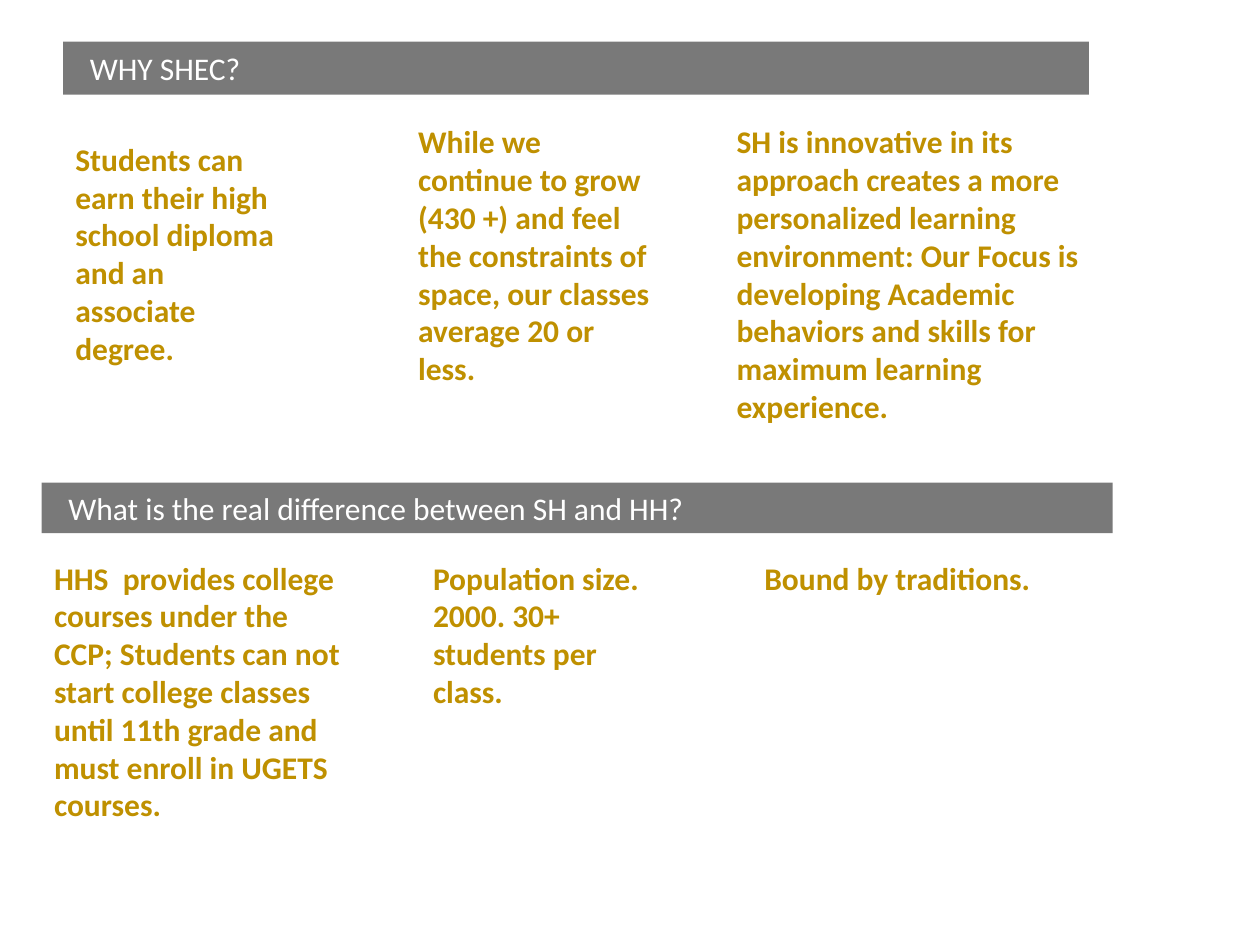
from lxml import etree
from pptx import Presentation
from pptx.dml.color import RGBColor
from pptx.enum.shapes import MSO_SHAPE
from pptx.enum.text import MSO_ANCHOR, MSO_AUTO_SIZE, PP_ALIGN
from pptx.oxml.ns import qn
from pptx.util import Cm, Pt

RECTANGLE = MSO_SHAPE.RECTANGLE
TOP, MIDDLE = MSO_ANCHOR.TOP, MSO_ANCHOR.MIDDLE
NO_AUTOFIT = MSO_AUTO_SIZE.NONE
LEFT = PP_ALIGN.LEFT
TITLE_ONLY = 5
COLOURS = {"bar": "0C0C0C", "heading": "FFFFFF", "body": "BF9000"}


def write_text(shape, text, *, colour, font="Calibri", size=18, bold=False,
               anchor=TOP, inset=0.25):
    """Fill the shape with one paragraph for each line of text."""
    frame = shape.text_frame
    frame.text = text
    frame.word_wrap = True
    frame.auto_size = NO_AUTOFIT
    frame.vertical_anchor = anchor
    frame.margin_left = Cm(inset)
    frame.margin_right = Cm(0.25)
    frame.margin_top = frame.margin_bottom = Cm(0.13)
    for paragraph in frame.paragraphs:
        paragraph.alignment = LEFT
        for run in paragraph.runs:
            run.font.name = font
            run.font.size = Pt(size)
            run.font.bold = bold
            run.font.color.rgb = RGBColor.from_string(colour)


class SlideBuilder:
    def __init__(self, slide, colours):
        self.slide = slide
        self.colours = colours

    def style_bar(self, shape, text):
        """Give a heading bar its translucent fill and its text."""
        shape.fill.solid()
        shape.fill.fore_color.rgb = RGBColor.from_string(self.colours["bar"])
        colour = shape._element.spPr.find(qn("a:solidFill"))[0]
        etree.SubElement(colour, qn("a:alpha"), val="55000")
        shape.line.fill.background()
        write_text(shape, text, colour=self.colours["heading"],
                   anchor=MIDDLE, inset=0.54)

    def title(self, text, left, top, width, height):
        shape = self.slide.shapes.title
        shape.left, shape.top = Cm(left), Cm(top)
        shape.width, shape.height = Cm(width), Cm(height)
        self.style_bar(shape, text)

    def heading(self, text, left, top, width, height):
        shape = self.slide.shapes.add_shape(
            RECTANGLE, Cm(left), Cm(top), Cm(width), Cm(height))
        shape.shadow.inherit = False
        self.style_bar(shape, text)

    def body(self, text, left, top, width, height):
        shape = self.slide.shapes.add_textbox(
            Cm(left), Cm(top), Cm(width), Cm(height))
        write_text(shape, text, colour=self.colours["body"], bold=True)


def main():
    presentation = Presentation()
    presentation.slide_width, presentation.slide_height = Cm(25.4), Cm(19.05)
    slide = presentation.slides.add_slide(
        presentation.slide_layouts[TITLE_ONLY])
    builder = SlideBuilder(slide, COLOURS)

    # Heading bars
    builder.title("WHY SHEC?", 1.27, 0.84, 20.68, 1.07)
    builder.heading("What is the real difference between SH and HH?",
                    0.84, 9.73, 21.59, 1.02)

    # Reasons for SHEC
    builder.body("Students can earn their high school diploma and an "
                 "associate degree.", 1.27, 2.69, 4.65, 5.84)
    builder.body("While we continue to grow (430 +) and feel the constraints "
                 "of space, our classes average 20 or less.",
                 8.18, 2.34, 5.28, 7.04)
    builder.body("SH is innovative in its approach creates a more "
                 "personalized learning environment: Our Focus is developing "
                 "Academic behaviors and skills for maximum learning "
                 "experience.", 14.6, 2.34, 7.62, 7.04)

    # Differences at HH
    row_top = 11.13
    builder.body("HHS  provides college courses under the CCP; Students can "
                 "not start college classes until 11th grade and must enroll "
                 "in UGETS courses.", 0.84, row_top, 6.5, 7.44)
    builder.body("Population size.\n2000. 30+ students per class.",
                 8.48, row_top, 5.28, 7.14)
    builder.body("Bound by traditions.", 15.16, row_top, 7.62, 7.14)

    presentation.save("out.pptx")


if __name__ == "__main__":
    main()
